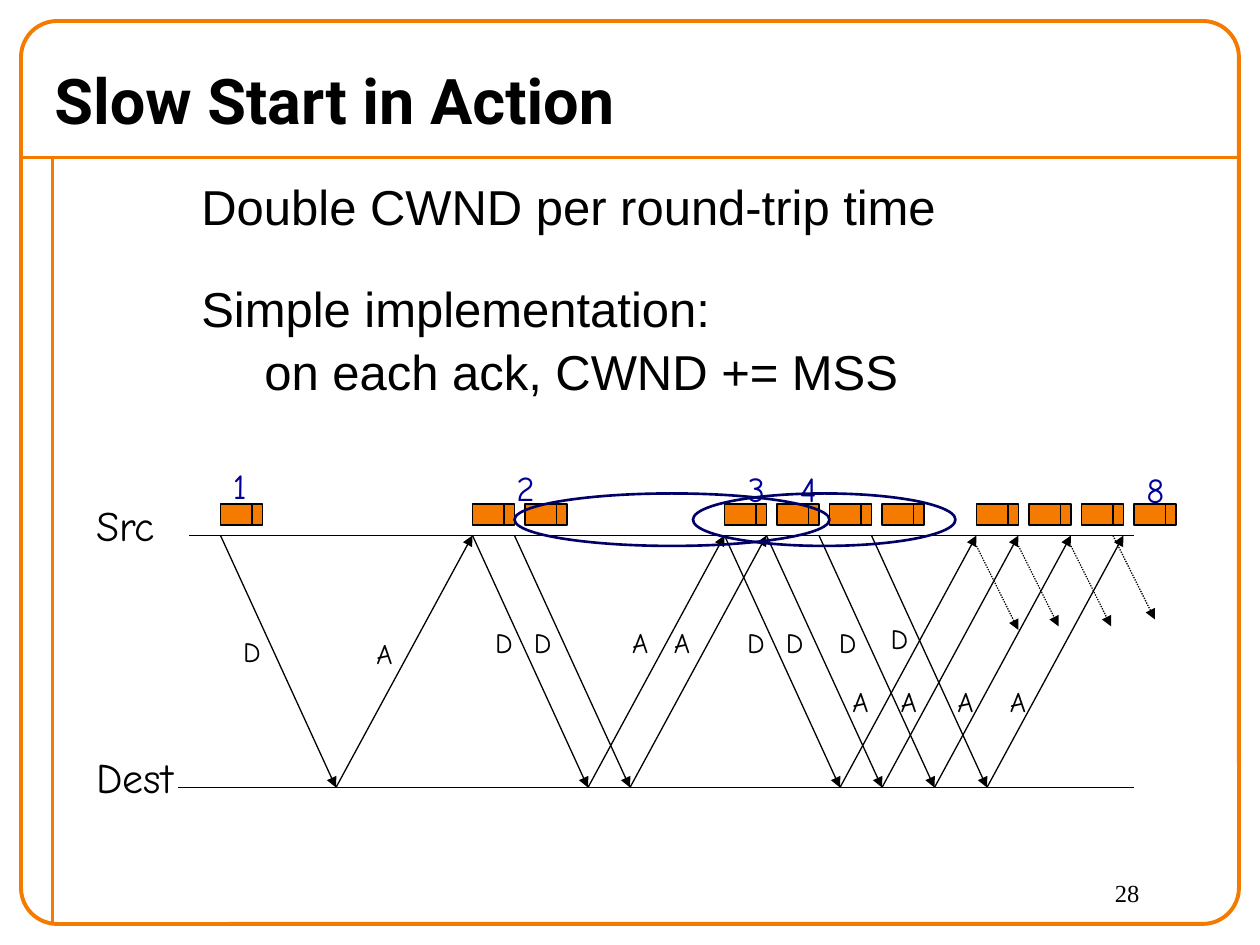
"""Build the slide that shows TCP slow start as a timing diagram."""
from dataclasses import dataclass
from typing import NamedTuple

from lxml import etree
from pptx import Presentation
from pptx.dml.color import RGBColor
from pptx.enum.dml import MSO_LINE
from pptx.enum.shapes import MSO_CONNECTOR, MSO_SHAPE
from pptx.enum.text import MSO_ANCHOR, MSO_AUTO_SIZE
from pptx.oxml.ns import qn
from pptx.util import Pt

STRAIGHT = MSO_CONNECTOR.STRAIGHT
RECT, ROUND, OVAL = MSO_SHAPE.RECTANGLE, MSO_SHAPE.ROUNDED_RECTANGLE, MSO_SHAPE.OVAL
DOTTED = MSO_LINE.ROUND_DOT
TOP, MIDDLE = MSO_ANCHOR.TOP, MSO_ANCHOR.MIDDLE
GROW = MSO_AUTO_SIZE.SHAPE_TO_FIT_TEXT


class Font(NamedTuple):
    name: str
    size: float
    color: RGBColor
    bold: bool = False


@dataclass(frozen=True)
class Theme:
    ink: RGBColor = RGBColor(0, 0, 0)
    orange: RGBColor = RGBColor(0xF4, 0x7A, 0x00)
    navy: RGBColor = RGBColor(0, 0, 0x66)
    title: Font = Font("Roboto", 36, RGBColor(0, 0, 0), True)
    body: Font = Font("Arial", 28, RGBColor(0, 0, 0))
    page: Font = Font("Times New Roman", 14, RGBColor(0, 0, 0))
    host: Font = Font("Comic Neue", 24, RGBColor(0, 0, 0))
    mark: Font = Font("Comic Neue", 16, RGBColor(0, 0, 0))
    count: Font = Font("Comic Neue", 20, RGBColor(0, 0, 0x99))
    thin: float = 0.75
    ring: float = 1.5
    frame: float = 2.25


class Box(NamedTuple):
    left: float
    top: float
    width: float
    height: float


class Span(NamedTuple):
    x1: float
    y1: float
    x2: float
    y2: float


class Label(NamedTuple):
    text: str
    box: Box
    font: Font


class Trip(NamedTuple):
    start: float
    data_x: float
    ack_x: float
    data_y: float = 354.2
    ack_y: float = 354.2


THEME = Theme()
SRC, DEST = 306, 450
DATA_RUN, TRIP_RUN = 66, 144
PACK_TOP, PACK_W, PACK_H, SPLIT = 288, 24, 12, 18
PITCH = 30
WINDOWS = ((126, 1), (270, 2), (414, 4), (558, 4))
TRIPS = (
    Trip(126, 131.8, 208, 359.3, 360),
    Trip(270, 275.8, 354.2),
    Trip(294, 298, 378),
    Trip(414, 419.8, 480, ack_y=387.4),
    Trip(438, 442, 507.6, ack_y=387.4),
    Trip(468, 472.3, 540, ack_y=387.4),
    Trip(498, 501.8, 570, 351.4, 387.4),
)
NEXT = (
    Span(558, 312, 582, 360),
    Span(582, 312, 605, 358),
    Span(612, 312, 635, 358),
    Span(636, 306, 660, 354),
)
RINGS = (Box(294, 282, 180, 30), Box(396, 282, 150, 30))
LABELS = (
    Label("Src", Box(48, 282, 54.7, 36), THEME.host),
    Label("Dest", Box(48, 426, 67.7, 36), THEME.host),
    Label("1", Box(126, 262.1, 23.8, 31), THEME.count),
    Label("2", Box(288, 262.8, 26.6, 31), THEME.count),
    Label("3", Box(420, 263.5, 26.6, 31), THEME.count),
    Label("4", Box(450, 263.5, 26.6, 31), THEME.count),
    Label("8", Box(648, 264.2, 26.6, 31), THEME.count),
)
BODY = (
    ("Double CWND per round-trip time", 2),
    ("Simple implementation:", 25),
    ("\ton each ack, CWND += MSS", 2),
)


def style(para, font: Font) -> None:
    for run in para.runs:
        run.font.name = font.name
        run.font.size = Pt(font.size)
        run.font.bold = font.bold
        run.font.color.rgb = font.color


def write(slide, label: Label, wrap: bool = False, anchor=TOP):
    frame = slide.shapes.add_textbox(*map(Pt, label.box)).text_frame
    frame.word_wrap = wrap
    frame.vertical_anchor = anchor
    if not wrap:
        frame.auto_size = GROW
    frame.text = label.text
    for para in frame.paragraphs:
        style(para, label.font)
    return frame


def draw(slide, span: Span, color: RGBColor = THEME.ink, width: float = THEME.thin,
         arrow: bool = False, dotted: bool = False) -> None:
    link = slide.shapes.add_connector(STRAIGHT, *map(Pt, span))
    link.line.color.rgb = color
    link.line.width = Pt(width)
    if dotted:
        link.line.dash_style = DOTTED
    if arrow:
        etree.SubElement(link.line._get_or_add_ln(), qn("a:tailEnd"), type="triangle")
    etree.SubElement(link._element.spPr, qn("a:effectLst"))


def outline(slide, kind, box: Box, color: RGBColor, width: float):
    shape = slide.shapes.add_shape(kind, *map(Pt, box))
    shape.shadow.inherit = False
    shape.fill.background()
    shape.line.color.rgb = color
    shape.line.width = Pt(width)
    return shape


def packet(slide, left: float) -> None:
    box = Box(left, PACK_TOP, PACK_W, PACK_H)
    shape = outline(slide, RECT, box, THEME.ink, THEME.thin)
    shape.fill.solid()
    shape.fill.fore_color.rgb = THEME.orange
    split = left + SPLIT
    draw(slide, Span(split, PACK_TOP, split, PACK_TOP + PACK_H))


def travel(slide, trip: Trip) -> None:
    turn = trip.start + DATA_RUN
    draw(slide, Span(trip.start, SRC, turn, DEST), arrow=True)
    draw(slide, Span(turn, DEST, trip.start + TRIP_RUN, SRC), arrow=True)
    for text, left, top in (("D", trip.data_x, trip.data_y), ("A", trip.ack_x, trip.ack_y)):
        write(slide, Label(text, Box(left, top, 26, 26.6), THEME.mark))


def border(slide) -> None:
    for span in (Span(12, 90, 708, 90), Span(30, 90, 30, 528)):
        draw(slide, span, THEME.orange, THEME.frame)
    frame = outline(slide, ROUND, Box(12, 12, 696, 516), THEME.orange, THEME.frame)
    frame.adjustments[0] = 0.04


def prose(slide) -> None:
    write(slide, Label("28", Box(630, 498, 72, 30), THEME.page), True)
    title = Label("Slow Start in Action", Box(24, 30, 696, 54), THEME.title)
    write(slide, title, True, MIDDLE)
    text = "\n".join(line for line, _ in BODY)
    frame = write(slide, Label(text, Box(108, 97.2, 498, 132), THEME.body), True)
    for para, (_, gap) in zip(frame.paragraphs, BODY):
        para.space_before = Pt(gap)


def main() -> None:
    deck = Presentation()
    deck.slide_width, deck.slide_height = Pt(720), Pt(540)
    slide = deck.slides.add_slide(deck.slide_layouts[6])
    border(slide)
    prose(slide)
    for left, level in ((108, SRC), (102, DEST)):
        draw(slide, Span(left, level, 648, level))
    for left, count in WINDOWS:
        for step in range(count):
            packet(slide, left + step * PITCH)
    for trip in TRIPS:
        travel(slide, trip)
    for span in NEXT:
        draw(slide, span, arrow=True, dotted=True)
    for label in LABELS:
        write(slide, label)
    for box in RINGS:
        outline(slide, OVAL, box, THEME.navy, THEME.ring)
    deck.save("out.pptx")


if __name__ == "__main__":
    main()
